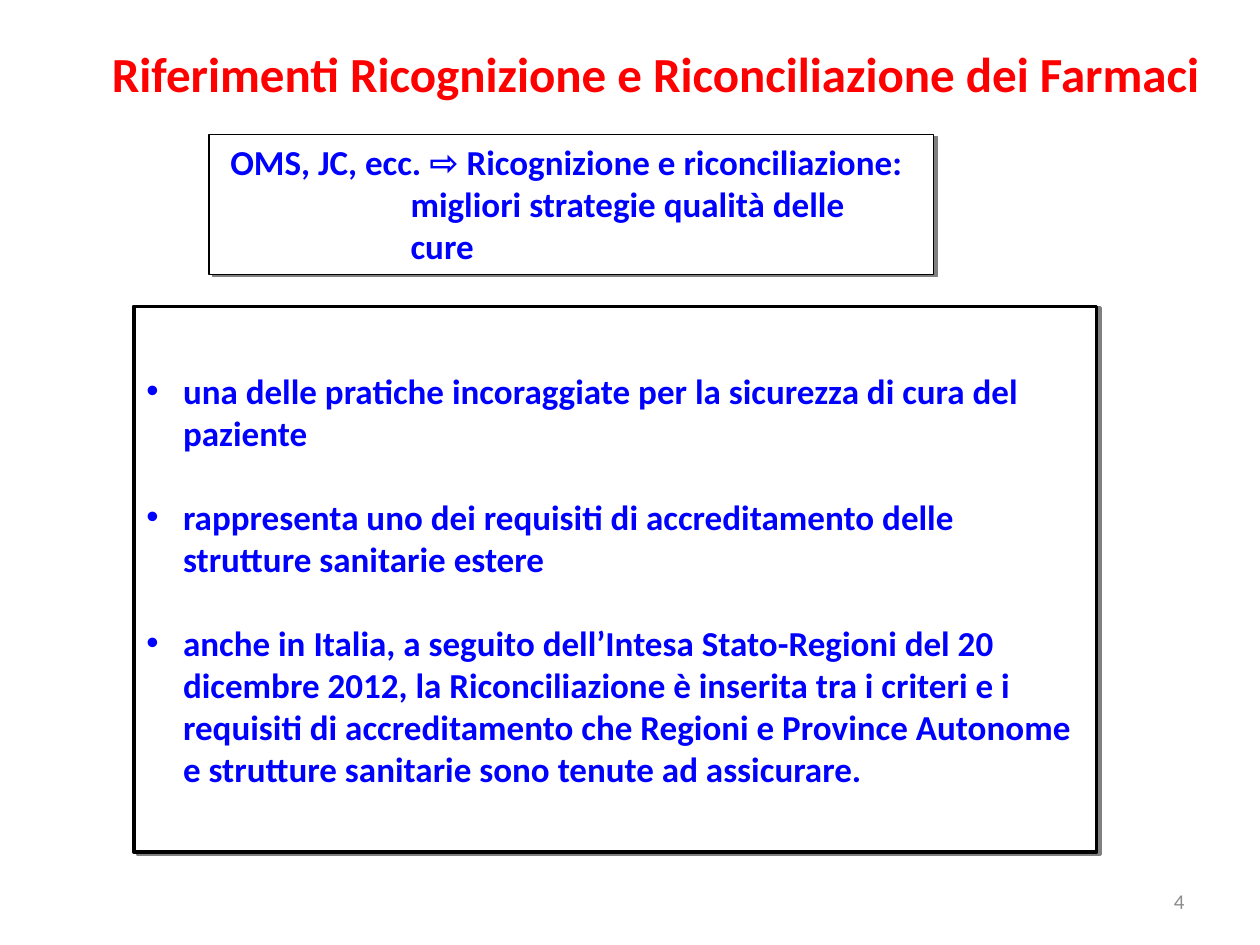
"""Build the slide on references for medication reconciliation."""
from lxml.etree import SubElement
from pptx import Presentation
from pptx.dml.color import RGBColor
from pptx.enum.shapes import MSO_SHAPE as Shape
from pptx.enum.text import MSO_ANCHOR as Anchor, PP_ALIGN as Align
from pptx.oxml.ns import qn
from pptx.util import Pt

RED = RGBColor(0xFF, 0x00, 0x00)
BLUE = RGBColor(0x00, 0x00, 0xFF)
GREY = RGBColor(0x8C, 0x8C, 0x8C)
BLACK = RGBColor(0x00, 0x00, 0x00)
WHITE = RGBColor(0xFF, 0xFF, 0xFF)
SHADOW = RGBColor(0x80, 0x80, 0x80)

STRATEGY_LINES = [
    ("OMS, JC, ecc. ⇨ Ricognizione e riconciliazione:", 5),
    ("migliori strategie qualità delle", 108),
    ("cure", 108),
]
REQUIREMENTS = [
    "una delle pratiche incoraggiate per la sicurezza di cura del paziente",
    "rappresenta uno dei requisiti di accreditamento delle strutture sanitarie estere",
    "anche in Italia, a seguito dell’Intesa Stato-Regioni del 20 dicembre 2012, "
    "la Riconciliazione è inserita tra i criteri e i requisiti di accreditamento "
    "che Regioni e Province Autonome e strutture sanitarie sono tenute ad assicurare.",
]


def set_font(para, size, color, bold=True):
    font = para.font
    font.name = "Calibri"
    font.size = Pt(size)
    font.bold = bold
    font.color.rgb = color


def add_label(page, bounds, text, align, size, color, bold, anchor):
    box = page.shapes.add_textbox(*map(Pt, bounds))
    frame = box.text_frame
    frame.word_wrap = True
    frame.vertical_anchor = anchor
    para = frame.paragraphs[0]
    para.text = text
    para.alignment = align
    set_font(para, size, color, bold)


def add_shadow(box):
    box.shadow.inherit = False
    effects = box._element.spPr.find(qn("a:effectLst"))
    shadow = SubElement(effects, qn("a:outerShdw"), dist=str(Pt(2.2)),
                        dir=str(27 * 60000), algn="ctr", rotWithShape="0")
    SubElement(shadow, qn("a:srgbClr"), val=str(SHADOW))


def add_panel(page, bounds, line_width, anchor):
    box = page.shapes.add_shape(Shape.RECTANGLE, *map(Pt, bounds))
    box.fill.solid()
    box.fill.fore_color.rgb = WHITE
    box.line.color.rgb = BLACK
    box.line.width = Pt(line_width)
    add_shadow(box)
    frame = box.text_frame
    frame.word_wrap = True
    frame.vertical_anchor = anchor
    return frame


def add_paragraph(frame, index, text, margin, bullet=False):
    para = frame.add_paragraph() if index else frame.paragraphs[0]
    para.text = text
    para.alignment = Align.LEFT
    properties = para._p.get_or_add_pPr()
    properties.set("marL", str(Pt(margin)))
    if bullet:
        properties.set("indent", str(-Pt(margin)))
        if index:
            para.space_before = Pt(24)
        SubElement(properties, qn("a:buFont"), typeface="Arial")
        SubElement(properties, qn("a:buChar"), char="•")
    set_font(para, 20, BLUE)


def main():
    deck = Presentation()
    deck.slide_width, deck.slide_height = Pt(720), Pt(540)
    page = deck.slides.add_slide(deck.slide_layouts[6])

    add_label(page, (516, 500.5, 168, 28.75), "4", Align.RIGHT,
              12, GREY, False, Anchor.MIDDLE)

    strategy = add_panel(page, (119.5, 77, 414, 80), 0.75, Anchor.TOP)
    for index, (text, margin) in enumerate(STRATEGY_LINES):
        add_paragraph(strategy, index, text, margin)

    requirements = add_panel(page, (76.5, 175, 550, 312), 2, Anchor.MIDDLE)
    for index, text in enumerate(REQUIREMENTS):
        add_paragraph(requirements, index, text, 21, bullet=True)

    add_label(page, (43, 21.5, 663, 34), "Riferimenti Ricognizione e Riconciliazione dei Farmaci",
              Align.CENTER, 28, RED, True, Anchor.TOP)

    deck.save("out.pptx")


if __name__ == "__main__":
    main()
